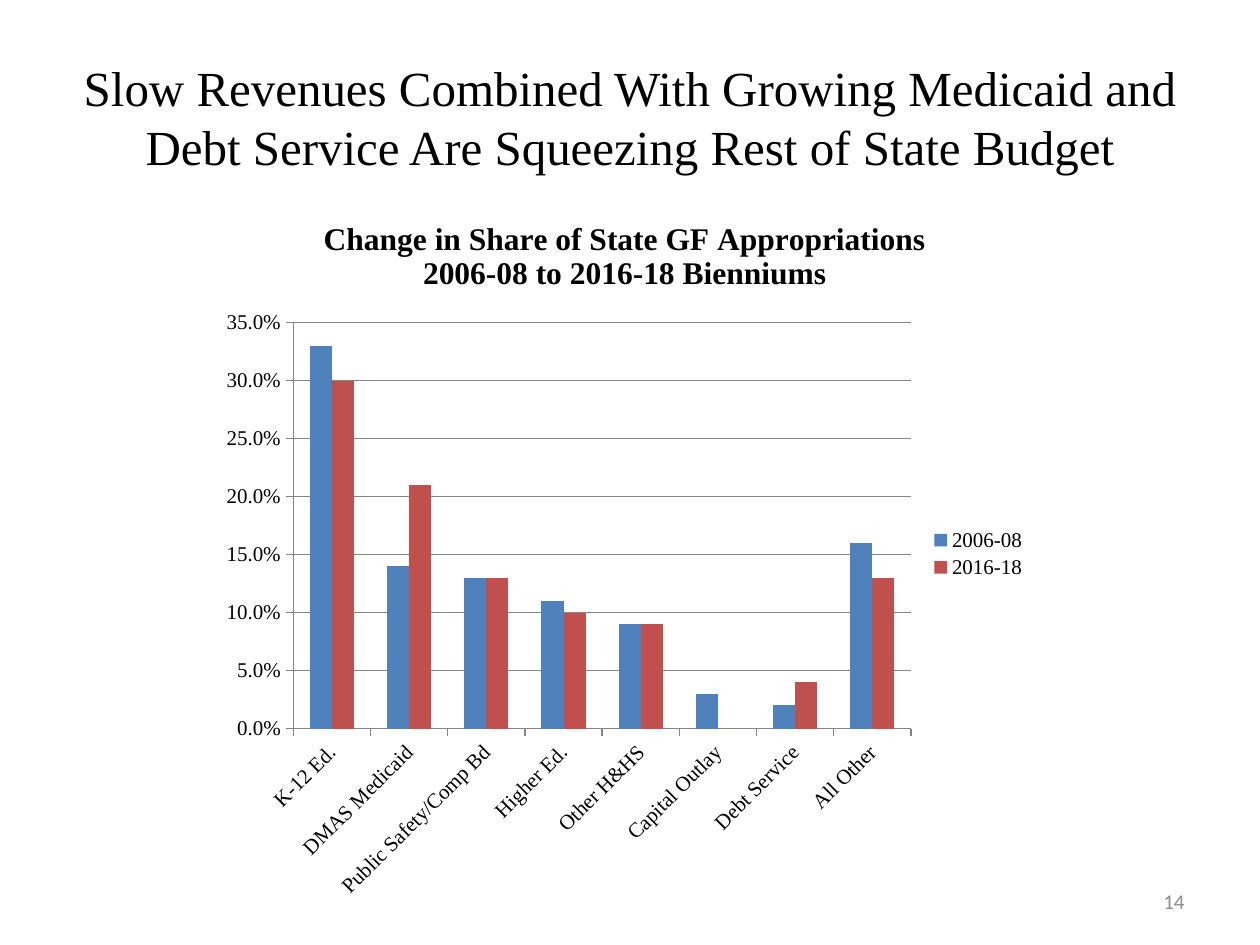
from pptx import Presentation
from pptx.chart.data import CategoryChartData
from pptx.dml.color import RGBColor
from pptx.enum.chart import XL_CHART_TYPE as ChartType, XL_LEGEND_POSITION as LegendPosition
from pptx.enum.chart import XL_TICK_MARK as TickMark
from pptx.enum.text import MSO_ANCHOR as Anchor, PP_ALIGN as Align
from pptx.util import Pt

SERIF = "Times New Roman"
BLACK, GRAY, AXIS_GRAY = "000000", "8C8C8C", "868686"
CATEGORIES = ["K-12 Ed.", "DMAS Medicaid", "Public Safety/Comp Bd", "Higher Ed.",
              "Other H&HS", "Capital Outlay", "Debt Service", "All Other"]
SHARES = {
    "2006-08": ("4F81BD", [0.33, 0.14, 0.13, 0.11, 0.09, 0.03, 0.02, 0.16]),
    "2016-18": ("C0504D", [0.3, 0.21, 0.13, 0.1, 0.09, 0, 0.04, 0.13]),
}


def color(value):
    """Turn a hex string into a color."""
    return RGBColor.from_string(value)


def set_values(target, values):
    """Set each attribute named in a dict."""
    for name, value in values.items():
        setattr(target, name, value)


def set_font(font, name, size, fill, bold=False):
    """Apply typeface, size, color and weight."""
    set_values(font, {"name": name, "size": Pt(size), "bold": bold})
    font.color.rgb = color(fill)


def add_text(slide, box, text, align, font_values):
    """Add a wrapped, vertically centered text box."""
    frame = slide.shapes.add_textbox(*map(Pt, box)).text_frame
    set_values(frame, {"word_wrap": True, "vertical_anchor": Anchor.MIDDLE, "text": text})
    paragraph = frame.paragraphs[0]
    paragraph.alignment = align
    set_font(paragraph.runs[0].font, *font_values)


def style_axes(chart):
    """Format both axes, the gridlines and the slanted category labels."""
    value_axis = chart.value_axis
    set_values(value_axis, {"minimum_scale": 0, "maximum_scale": 0.35,
                            "major_unit": 0.05, "has_major_gridlines": True})
    set_values(value_axis.tick_labels,
               {"number_format": "0.0%", "number_format_is_linked": False})
    for axis in (chart.category_axis, value_axis):
        set_values(axis, {"major_tick_mark": TickMark.OUTSIDE, "minor_tick_mark": TickMark.NONE})
        set_font(axis.tick_labels.font, SERIF, 12, BLACK)
    for part in (chart.category_axis, value_axis, value_axis.major_gridlines):
        part.format.line.color.rgb = color(AXIS_GRAY)
    body = chart.category_axis._element.txPr.bodyPr
    body.set("rot", "-2700000")
    body.set("vert", "horz")


def add_share_chart(slide, box, title):
    """Add the clustered column chart of budget shares."""
    data = CategoryChartData(number_format="0.0%")
    data.categories = CATEGORIES
    for name, (_, values) in SHARES.items():
        data.add_series(name, values)
    chart = slide.shapes.add_chart(ChartType.COLUMN_CLUSTERED, *map(Pt, box), data).chart
    set_font(chart.font, SERIF, 12, BLACK)
    set_values(chart, {"has_title": True, "has_legend": True})
    chart.chart_title.text_frame.text = title
    for paragraph in chart.chart_title.text_frame.paragraphs:
        set_font(paragraph.runs[0].font, SERIF, 18, BLACK, True)
    set_values(chart.legend, {"position": LegendPosition.RIGHT, "include_in_layout": False})
    set_font(chart.legend.font, SERIF, 12, BLACK)
    plot = chart.plots[0]
    set_values(plot, {"gap_width": 150, "overlap": 0, "vary_by_categories": False})
    for series, (fill, _) in zip(plot.series, SHARES.values()):
        series.format.fill.solid()
        series.format.fill.fore_color.rgb = color(fill)
    style_axes(chart)


def main():
    """Build and save the slide."""
    presentation = Presentation()
    set_values(presentation, {"slide_width": Pt(720), "slide_height": Pt(540)})
    slide = presentation.slides.add_slide(presentation.slide_layouts[6])
    add_text(slide, (36, 21.6, 648, 90),
             "Slow Revenues Combined With Growing Medicaid and "
             "Debt Service Are Squeezing Rest of State Budget",
             Align.CENTER, (SERIF, 28, BLACK))
    add_text(slide, (516, 500.5, 168, 28.75), "14", Align.RIGHT, ("Calibri", 12, GRAY))
    add_share_chart(slide, (120, 111.6, 474, 409.7),
                    "Change in Share of State GF Appropriations\n2006-08 to 2016-18 Bienniums")
    presentation.save("out.pptx")


if __name__ == "__main__":
    main()
